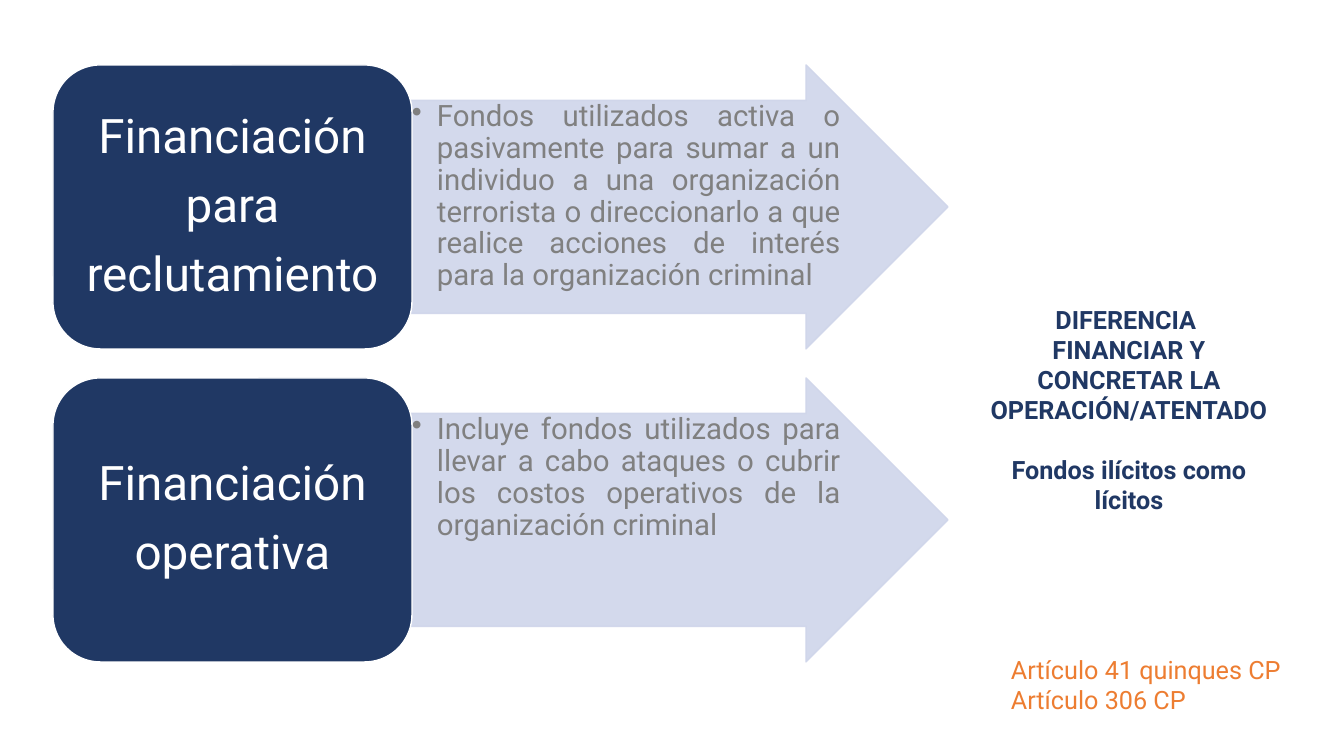
import pptx
import pptx.util
import pptx.dml.color
import pptx.enum.shapes
import pptx.enum.text
import pptx.oxml
import pptx.oxml.ns

RGB = pptx.dml.color.RGBColor
NAVY = RGB(0x20, 0x38, 0x64)
PALE = RGB(0xCF, 0xD5, 0xEA)
GREY = RGB(0x80, 0x80, 0x80)
ORANGE = RGB(0xED, 0x7D, 0x31)
WHITE = RGB(0xFF, 0xFF, 0xFF)

SHAPE = pptx.enum.shapes.MSO_SHAPE
ALIGN = pptx.enum.text.PP_ALIGN
ANCHOR = pptx.enum.text.MSO_ANCHOR
Pt = pptx.util.Pt
SCALE = 914400 / 100.8

TOP, STEP, HIGH = 65, 313, 284
ROWS = [
    (["Financiación", "para", "reclutamiento"],
     "Fondos utilizados activa o pasivamente para sumar a un individuo a una "
     "organización terrorista o direccionarlo a que realice acciones de "
     "interés para la organización criminal"),
    (["Financiación", "operativa"],
     "Incluye fondos utilizados para llevar a cabo ataques o cubrir los "
     "costos operativos de la organización criminal"),
]


def px(n):
    return pptx.util.Emu(round(n * SCALE))


def write(frame, lines, size, color, pad, bold=False, **form):
    """Fill a text frame; pad is (side, top) and form holds paragraph values."""
    frame.word_wrap = True
    side, top = map(px, pad)
    frame.margin_left = frame.margin_right = side
    frame.margin_top = frame.margin_bottom = top
    for i, line in enumerate(lines):
        para = frame.add_paragraph() if i else frame.paragraphs[0]
        for key, value in form.items():
            setattr(para, key, value)
        run = para.add_run()
        run.text = line
        font = {"name": "Roboto", "size": Pt(size), "bold": bold}
        for key, value in font.items():
            setattr(run.font, key, value)
        run.font.color.rgb = color


def block(slide, kind, box, fill, line):
    shape = slide.shapes.add_shape(kind, *map(px, box))
    shape.shadow.inherit = False
    shape.fill.solid()
    shape.fill.fore_color.rgb = fill
    shape.line.color.rgb = line
    shape.line.width = Pt(1)
    return shape


def fade(shape, percent):
    """Set the opacity of fill and line."""
    props = shape.fill.fore_color, shape.line.color
    for node in shape.element.spPr.iter(pptx.oxml.ns.qn("a:srgbClr")):
        alpha = pptx.oxml.parse_xml(
            f'<a:alpha {pptx.oxml.ns.nsdecls("a")} val="{percent * 1000}"/>')
        node.append(alpha)


def bullet(para, indent):
    props = para._p.get_or_add_pPr()
    props.set("marL", str(px(indent)))
    props.set("indent", str(-px(indent)))
    props.append(pptx.oxml.parse_xml(
        f'<a:buChar {pptx.oxml.ns.nsdecls("a")} char="•"/>'))


def arrow(slide, top, text):
    shape = block(slide, SHAPE.RIGHT_ARROW, (411, top, 537, HIGH), PALE, PALE)
    shape.adjustments[0] = 0.75
    shape.adjustments[1] = 0.5
    fade(shape, 90)
    frame = shape.text_frame
    frame.vertical_anchor = ANCHOR.TOP
    write(frame, [text], 21, GREY, (1, 1),
          alignment=ALIGN.JUSTIFY, line_spacing=0.9)
    bullet(frame.paragraphs[0], 25)


def label(slide, top, lines):
    shape = block(slide, SHAPE.ROUNDED_RECTANGLE, (53, top, 359, HIGH),
                  NAVY, WHITE)
    shape.text_frame.vertical_anchor = ANCHOR.MIDDLE
    write(shape.text_frame, lines, 34, WHITE, (14, 7),
          alignment=ALIGN.CENTER, line_spacing=0.9, space_after=Pt(12.5))


def note(slide, box, lines, color, **form):
    frame = slide.shapes.add_textbox(*map(px, box)).text_frame
    write(frame, lines, 18, color, (10, 5), **form)
    return frame


def main():
    deck = pptx.Presentation()
    deck.slide_width, deck.slide_height = px(1344), px(756)
    slide = deck.slides.add_slide(deck.slide_layouts[6])
    for i, (lines, text) in enumerate(ROWS):
        top = TOP + i * STEP
        arrow(slide, top, text)
        label(slide, top, lines)
    side = note(slide, (967, 299, 324, 224),
                ["DIFERENCIA ", "FINANCIAR Y CONCRETAR LA OPERACIÓN/ATENTADO",
                 "Fondos ilícitos como lícitos"],
                NAVY, bold=True, alignment=ALIGN.CENTER)
    side.paragraphs[-1].space_before = Pt(21)
    note(slide, (1001, 649, 324, 72),
         ["Artículo 41 quinques CP", "Artículo 306 CP"], ORANGE)
    deck.save("out.pptx")


if __name__ == "__main__":
    main()
